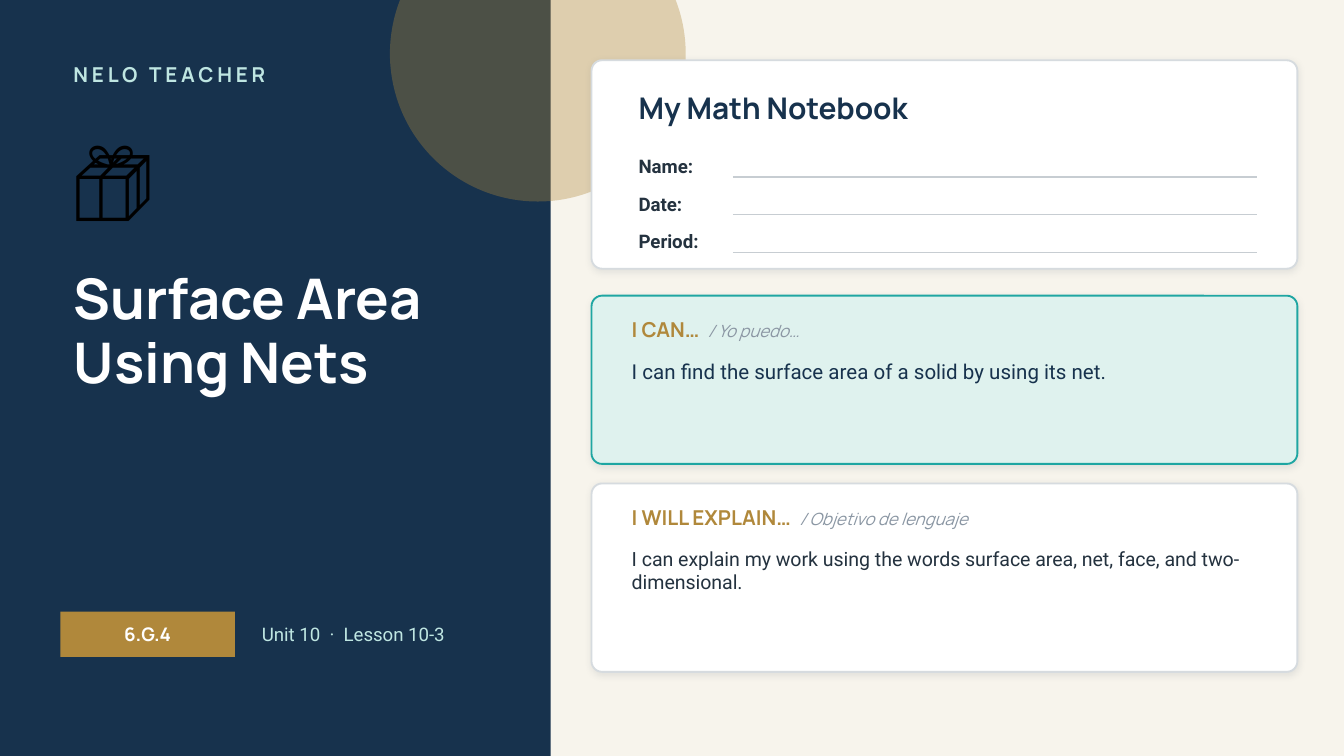
from dataclasses import dataclass

from lxml.etree import SubElement
from pptx import Presentation
from pptx.dml.color import RGBColor as Rgb
from pptx.enum.shapes import MSO_CONNECTOR as Link, MSO_SHAPE as Form
from pptx.enum.text import MSO_ANCHOR as Anchor, MSO_AUTO_SIZE as Auto, PP_ALIGN as Align
from pptx.oxml.ns import qn
from pptx.util import Cm, Pt


@dataclass(frozen=True)
class Theme:
    head: str = "Manrope"
    body: str = "Roboto"
    icon: str = "Calibri"
    paper: str = "F7F4EC"
    white: str = "FFFFFF"
    black: str = "000000"
    navy: str = "17324D"
    gold: str = "B0883B"
    mint: str = "BFE6E2"
    pale: str = "DFF2EE"
    teal: str = "1FA6A2"
    ink: str = "24323F"
    gray: str = "8A96A3"
    edge: str = "D6DBDF"
    rule: str = "C7CDD2"
    shade: str = "1C2E42"
    huge: float = 44
    title: float = 30
    large: float = 16
    label: float = 11
    text: float = 10.5
    small: float = 10
    note: float = 9


@dataclass(frozen=True)
class Box:
    """A frame in centimetres."""
    x: float
    y: float
    w: float
    h: float

    def inner(self, dx, dy, w, h):
        return Box(self.x + dx, self.y + dy, w, h)

    def size(self):
        return [Cm(v) for v in (self.x, self.y, self.w, self.h)]


T = Theme()


def style(run, size, color, face=T.head, bold=False, italic=False):
    font = run.font
    font.size, font.name = Pt(size), face
    font.bold, font.italic = bold, italic
    font.color.rgb = Rgb.from_string(color)


def write(slide, box, text, *look, anchor=Anchor.MIDDLE, **more):
    frame = slide.shapes.add_textbox(*box.size()).text_frame
    frame.word_wrap = True
    frame.vertical_anchor = anchor
    frame.text = text
    para = frame.paragraphs[0]
    style(para.runs[0], *look, **more)
    return para


def draw(slide, form, box, fill, line=None):
    shape = slide.shapes.add_shape(form, *box.size())
    shape.shadow.inherit = False
    shape.fill.solid()
    shape.fill.fore_color.rgb = Rgb.from_string(fill)
    if line:
        shape.line.color.rgb = Rgb.from_string(line)
        shape.line.width = Pt(1)
    else:
        shape.line.fill.background()
    return shape


def fade(color, percent):
    SubElement(color, qn("a:alpha"), val=str(percent * 1000))


def card(slide, box, fill, line):
    shape = draw(slide, Form.ROUNDED_RECTANGLE, box, fill, line)
    shape.adjustments[0] = 0.2 / box.h
    glow = SubElement(shape._element.spPr.find(qn("a:effectLst")), qn("a:outerShdw"),
                      blurRad=str(Pt(4)), dist=str(Pt(1)), dir="5400000",
                      algn="bl", rotWithShape="0")
    fade(SubElement(glow, qn("a:srgbClr"), val=T.shade), 10)


def rule(slide, x, y, width):
    line = slide.shapes.add_connector(Link.STRAIGHT, Cm(x), Cm(y), Cm(x + width), Cm(y))
    line.line.color.rgb = Rgb.from_string(T.rule)
    line.line.width = Pt(0.75)
    SubElement(line._element.spPr, qn("a:effectLst"))


def heading(slide, box, text):
    title = slide.shapes.title
    title.left, title.top, title.width, title.height = box.size()
    slide.shapes._spTree.append(title._element)  # bring in front of the panel
    frame = title.text_frame
    frame.text = text
    frame.word_wrap, frame.auto_size = True, Auto.NONE
    frame.vertical_anchor = Anchor.TOP
    para = frame.paragraphs[0]
    para.alignment, para.line_spacing = Align.LEFT, 0.95
    style(para.runs[0], T.title, T.white, bold=True)


def cover(slide, box):
    """Navy side panel with lesson title, standard and unit."""
    draw(slide, Form.RECTANGLE, box, T.navy)
    disc = draw(slide, Form.OVAL, box.inner(7.37, -1.78, 5.59, 5.59), T.gold)
    fade(disc._element.spPr.find(qn("a:solidFill"))[0], 35)

    left = 1.14
    brand = write(slide, box.inner(left, 1.02, 8.38, 0.76), "NELO TEACHER",
                  T.label, T.mint, bold=True)
    brand.runs[0].font._element.set("spc", "200")
    write(slide, box.inner(left, 2.16, 3.81, 2.29), "📦", T.huge, T.black, T.icon)
    heading(slide, box.inner(left, 4.95, 8.38, 4.32), "Surface Area Using Nets")

    foot = 11.56
    tag = draw(slide, Form.RECTANGLE, box.inner(left, foot, 3.3, 0.86), T.gold)
    tag.text_frame.text = "6.G.4"
    tag.text_frame.vertical_anchor = Anchor.MIDDLE
    para = tag.text_frame.paragraphs[0]
    para.alignment = Align.CENTER
    style(para.runs[0], T.small, T.white, bold=True)
    write(slide, box.inner(4.7, foot, 5.33, 0.86), "Unit 10  ·  Lesson 10-3",
          T.small, T.mint, T.body)


def notebook(slide, box):
    card(slide, box, T.white, T.edge)
    write(slide, box.inner(0.64, 0.38, 12.19, 1.02), "My Math Notebook",
          T.large, T.navy, bold=True)
    for i, name in enumerate(("Name:", "Date:", "Period:")):
        row = box.inner(0.64, 1.7 + 0.71 * i, 2.03, 0.61)
        write(slide, row, name, T.small, T.ink, T.body, bold=True)
        rule(slide, row.x + row.w, row.y + 0.51, 9.91)


def goal(slide, box, colors, lead, gloss, text, size, ink):
    """Card with a bilingual label above one statement."""
    card(slide, box, *colors)
    label = write(slide, box.inner(0.51, 0.25, 12.32, 0.76), lead + "  ",
                  T.label, T.gold, bold=True)
    extra = label.add_run()
    extra.text = "/ " + gloss
    style(extra, T.note, T.gray, italic=True)
    write(slide, box.inner(0.51, 1.07, 12.32, box.h - 1.2), text,
          size, ink, T.body, anchor=Anchor.TOP)


def main():
    deck = Presentation()
    deck.slide_width, deck.slide_height = Cm(25.4), Cm(14.29)
    slide = deck.slides.add_slide(deck.slide_layouts[5])
    slide.background.fill.solid()
    slide.background.fill.fore_color.rgb = Rgb.from_string(T.paper)

    cover(slide, Box(0, 0, 10.41, 14.29))
    x, width = 11.18, 13.34
    notebook(slide, Box(x, 1.14, width, 3.94))
    goal(slide, Box(x, 5.59, width, 3.18), (T.pale, T.teal), "I CAN…", "Yo puedo…",
         "I can find the surface area of a solid by using its net.", T.label, T.navy)
    goal(slide, Box(x, 9.14, width, 3.56), (T.white, T.edge),
         "I WILL EXPLAIN…", "Objetivo de lenguaje",
         "I can explain my work using the words surface area, net, face, "
         "and two-dimensional.", T.text, T.ink)
    deck.save("out.pptx")


if __name__ == "__main__":
    main()
